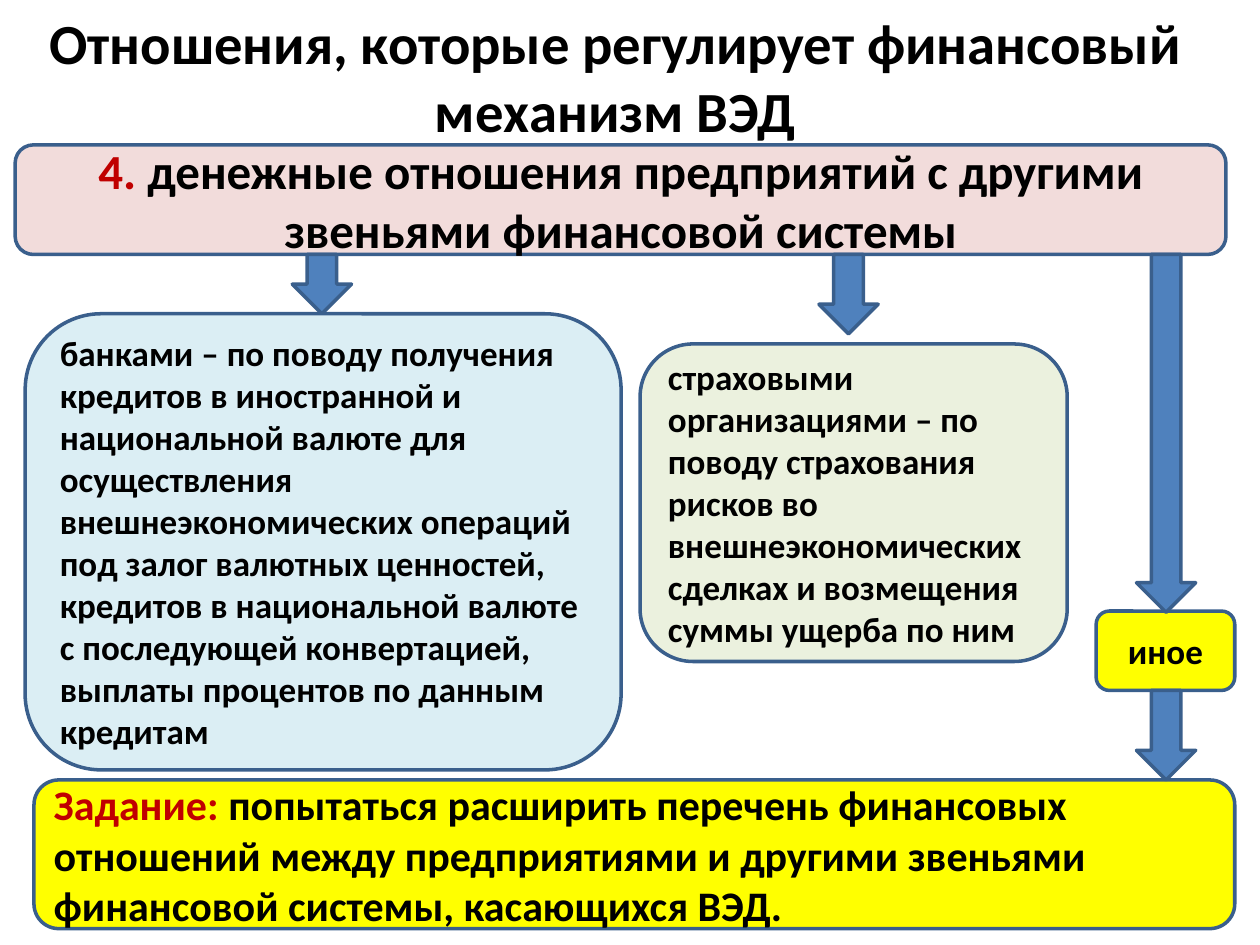
from pptx import Presentation
from pptx.dml.color import RGBColor
from pptx.enum.shapes import MSO_SHAPE
from pptx.enum.text import MSO_ANCHOR, PP_ALIGN
from pptx.util import Inches, Pt

BLACK = RGBColor(0x00, 0x00, 0x00)
RED = RGBColor(0xC0, 0x00, 0x00)
OUTLINE = RGBColor(0x3A, 0x5F, 0x8C)
ARROW_BLUE = RGBColor(0x4F, 0x81, 0xBD)
PINK = RGBColor(0xF2, 0xDC, 0xDB)
LIGHT_BLUE = RGBColor(0xDB, 0xEE, 0xF4)
LIGHT_GREEN = RGBColor(0xEB, 0xF1, 0xDE)
YELLOW = RGBColor(0xFF, 0xFF, 0x00)


class SlideBuilder:
    """Holds the slide and the style shared by its elements."""

    font_name = "Calibri"
    line_width = Pt(2)
    arrow_width = 0.47

    def __init__(self, page):
        self.page = page

    def add_text(self, shape, paragraphs, size, align):
        """Each paragraph is a list of (text, colour) runs."""
        frame = shape.text_frame
        frame.word_wrap = True
        frame.vertical_anchor = MSO_ANCHOR.MIDDLE
        for index, runs in enumerate(paragraphs):
            para = frame.add_paragraph() if index else frame.paragraphs[0]
            para.alignment = align
            for text, color in runs:
                span = para.add_run()
                span.text = text
                span.font.name = self.font_name
                span.font.size = Pt(size)
                span.font.bold = True
                span.font.color.rgb = color

    def title(self, left, top, width, height, text, size):
        box = self.page.shapes.add_textbox(
            Inches(left), Inches(top), Inches(width), Inches(height))
        self.add_text(box, [[(text, BLACK)]], size, PP_ALIGN.CENTER)

    def shape(self, kind, left, top, width, height, fill):
        shape = self.page.shapes.add_shape(
            kind, Inches(left), Inches(top), Inches(width), Inches(height))
        shape.shadow.inherit = False
        shape.fill.solid()
        shape.fill.fore_color.rgb = fill
        shape.line.color.rgb = OUTLINE
        shape.line.width = self.line_width
        return shape

    def panel(self, left, top, width, height, fill, paragraphs, size,
              align=PP_ALIGN.LEFT):
        box = self.shape(MSO_SHAPE.ROUNDED_RECTANGLE,
                         left, top, width, height, fill)
        self.add_text(box, paragraphs, size, align)

    def down_arrow(self, left, top, bottom):
        self.shape(MSO_SHAPE.DOWN_ARROW, left, top,
                   self.arrow_width, bottom - top, ARROW_BLUE)


def main():
    deck = Presentation()
    deck.slide_width = Inches(10)
    deck.slide_height = Inches(7.5)
    builder = SlideBuilder(deck.slides.add_slide(deck.slide_layouts[6]))

    # Title and heading
    builder.title(0.27, 0.13, 9.23, 0.95,
                  "Отношения, которые регулирует финансовый механизм ВЭД", 32.4)
    builder.panel(0.12, 1.15, 9.61, 0.87, PINK, [[
        ("4. ", RED),
        ("денежные отношения предприятий с другими звеньями "
         "финансовой системы", BLACK),
    ]], 28, PP_ALIGN.CENTER)

    # Task
    builder.panel(0.27, 6.19, 9.53, 1.18, YELLOW, [[
        ("Задание:", RED),
        (" попытаться расширить перечень финансовых отношений между "
         "предприятиями и другими звеньями финансовой системы, "
         "касающихся ВЭД.", BLACK),
    ]], 24)

    # Banks, insurers and others
    builder.panel(0.2, 2.49, 4.73, 3.62, LIGHT_BLUE, [
        [("банками – по поводу получения кредитов в иностранной и "
          "национальной валюте для осуществления внешнеэкономических "
          "операций под залог валютных ценностей,", BLACK)],
        [("кредитов в национальной валюте с последующей конвертацией, "
          "выплаты процентов по данным кредитам", BLACK)],
    ], 20)
    builder.panel(5.08, 2.73, 3.39, 2.52, LIGHT_GREEN, [[
        ("страховыми организациями – по поводу страхования рисков во "
         "внешнеэкономических сделках и возмещения суммы ущерба по ним",
         BLACK),
    ]], 20)
    builder.panel(8.7, 4.85, 1.1, 0.63, YELLOW, [[("иное", BLACK)]], 20,
                  PP_ALIGN.CENTER)

    # Arrows: left, top, bottom
    for left, top, bottom in [(2.32, 2.02, 2.49), (6.5, 2.02, 2.65),
                              (9.02, 2.02, 4.86), (9.02, 5.48, 6.19)]:
        builder.down_arrow(left, top, bottom)

    deck.save("out.pptx")


if __name__ == "__main__":
    main()
